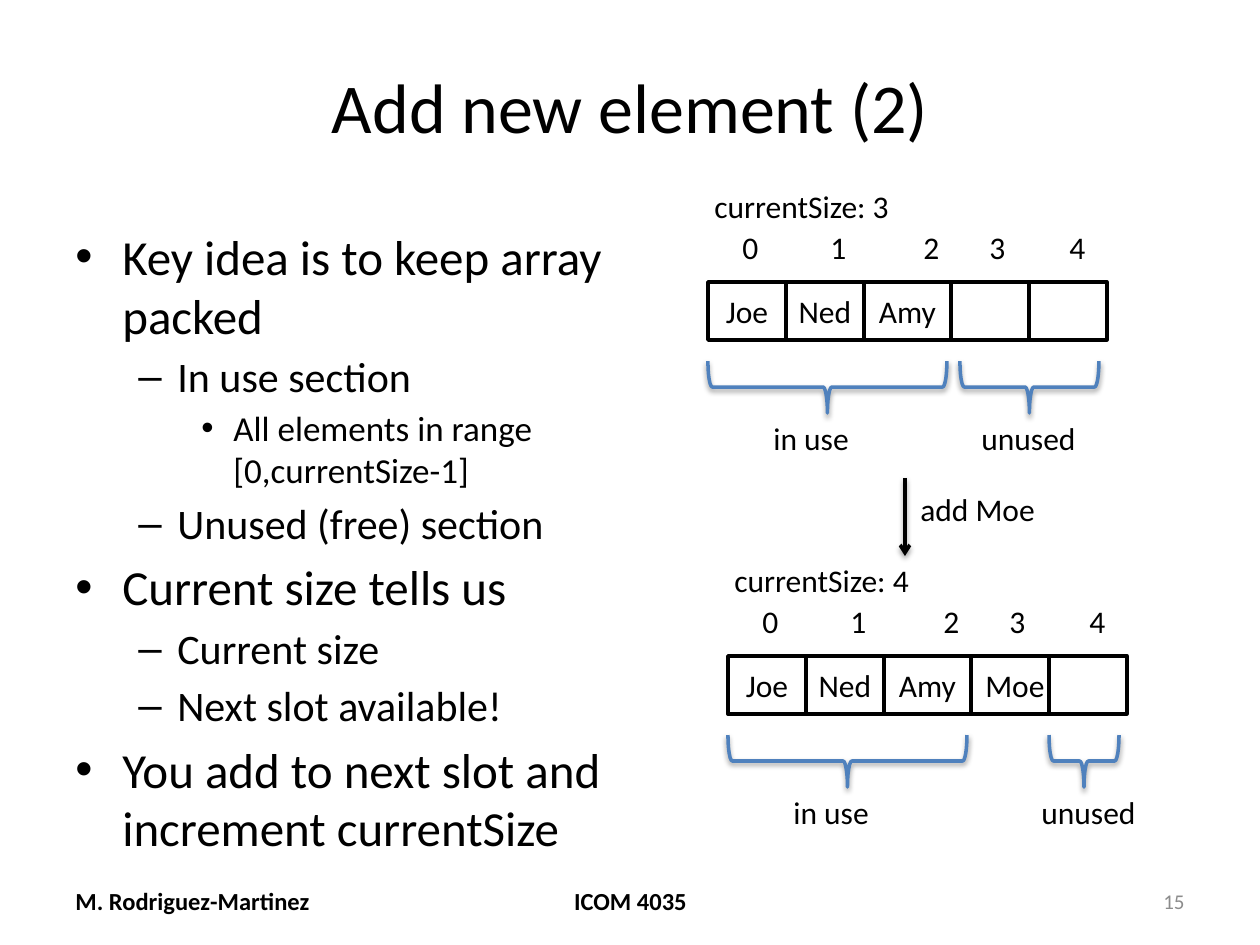
from dataclasses import dataclass

from lxml import etree
from pptx import Presentation
from pptx import util as u
from pptx.dml.color import RGBColor
from pptx.enum import shapes, text
from pptx.oxml import ns

PX = 914400 / 126
FONT = "Calibri"
COLORS = {"ink": "000000", "paper": "FFFFFF", "brace": "4F81BD", "muted": "8C8C8C"}
ALIGN = text.PP_ALIGN
ANCHOR = text.MSO_ANCHOR
CELL_HEIGHT = 58
BRACE_DEPTH = 52
INDEX_STOPS = [88, 181, 247, 327]


@dataclass
class Bullet:
    level: int
    words: str


@dataclass
class Level:
    size: int
    margin: int
    hang: int
    mark: str


@dataclass
class Cell:
    offset: int
    width: int
    name: str = ""


@dataclass
class Section:
    offset: int
    width: int
    label: str
    label_offset: int
    label_width: int


@dataclass
class ArrayState:
    left: int
    top: int
    caption: str
    cells: list[Cell]
    sections: list[Section]


LEVELS = [Level(28, 47, 47, "•"), Level(24, 102, 39, "–"), Level(20, 158, 32, "•")]

BULLETS = [
    Bullet(0, "Key idea is to keep array packed"),
    Bullet(1, "In use section"),
    Bullet(2, "All elements in range [0,currentSize-1]"),
    Bullet(1, "Unused (free) section"),
    Bullet(0, "Current size tells us"),
    Bullet(1, "Current size"),
    Bullet(1, "Next slot available!"),
    Bullet(0, "You add to next slot and increment currentSize"),
]

FIRST_CELLS = [Cell(0, 78, "Joe"), Cell(78, 78, "Ned"), Cell(156, 87, "Amy")]
LAST_CELL = Cell(321, 78)
IN_USE = Section(0, 239, "in use", 53, 102)

STATES = [
    ArrayState(708, 282, "currentSize: 3", [*FIRST_CELLS, Cell(243, 78), LAST_CELL],
               [Section(252, 139, "unused", 261, 121), IN_USE]),
    ArrayState(728, 656, "currentSize: 4", [*FIRST_CELLS, Cell(243, 88, "Moe"), LAST_CELL],
               [Section(321, 70, "unused", 301, 121), IN_USE]),
]


def px(length: float) -> u.Emu:
    return u.Emu(round(length * PX))


def color(key: str) -> RGBColor:
    return RGBColor.from_string(COLORS[key])


def add_run(paragraph, words: str, size: int, ink: str = "ink", bold: bool = False) -> None:
    run = paragraph.add_run()
    run.text = words
    run.font.name = FONT
    run.font.size = u.Pt(size)
    run.font.bold = bold
    run.font.color.rgb = color(ink)


def add_text(parent, left: int, top: int, width: int, height: int, words: str, size: int = 18,
             align=ALIGN.LEFT, anchor=ANCHOR.TOP, wrap: bool = True,
             ink: str = "ink", bold: bool = False):
    frame = parent.add_textbox(px(left), px(top), px(width), px(height)).text_frame
    frame.word_wrap = wrap
    frame.vertical_anchor = anchor
    if not wrap:
        frame.auto_size = text.MSO_AUTO_SIZE.SHAPE_TO_FIT_TEXT
    paragraph = frame.paragraphs[0]
    paragraph.alignment = align
    add_run(paragraph, words, size, ink, bold)
    return paragraph


def add_label(parent, left: int, top: int, width: int, words: str) -> None:
    add_text(parent, left, top, width, 50, words, wrap=False)


def add_effects(shape):
    return etree.SubElement(shape.element.spPr, ns.qn("a:effectLst"))


def add_shadow(shape) -> None:
    shadow = etree.SubElement(add_effects(shape), ns.qn("a:outerShdw"), blurRad="40000",
                              dist="20000", dir="5400000", rotWithShape="0")
    shade = etree.SubElement(shadow, ns.qn("a:srgbClr"), val=COLORS["ink"])
    etree.SubElement(shade, ns.qn("a:alpha"), val="38000")


def set_line(shape, key: str) -> None:
    shape.line.color.rgb = color(key)
    shape.line.width = u.Pt(2)


def add_cell(parent, state: ArrayState, cell: Cell) -> None:
    box = parent.add_shape(shapes.MSO_SHAPE.RECTANGLE, px(state.left + cell.offset),
                           px(state.top), px(cell.width), px(CELL_HEIGHT))
    box.shadow.inherit = False
    box.fill.solid()
    box.fill.fore_color.rgb = color("paper")
    set_line(box, "ink")
    if cell.name:
        box.text_frame.vertical_anchor = ANCHOR.MIDDLE
        paragraph = box.text_frame.paragraphs[0]
        paragraph.alignment = ALIGN.CENTER
        add_run(paragraph, cell.name, 18)


def add_indexes(parent, state: ArrayState) -> None:
    indexes = add_text(parent, state.left + 22, state.top - 60, 372, 50,
                       "\t".join(str(index) for index in range(len(state.cells))))
    stops = etree.SubElement(indexes._p.get_or_add_pPr(), ns.qn("a:tabLst"))
    for stop in INDEX_STOPS:
        etree.SubElement(stops, ns.qn("a:tab"), pos=str(px(stop)), algn="l")


def add_section(parent, state: ArrayState, section: Section) -> None:
    center_x = state.left + section.offset + section.width / 2
    center_y = state.top + 105
    brace = parent.add_shape(shapes.MSO_SHAPE.LEFT_BRACE, px(center_x - BRACE_DEPTH / 2),
                             px(center_y - section.width / 2), px(BRACE_DEPTH), px(section.width))
    brace.rotation = 270
    brace.fill.background()
    set_line(brace, "brace")
    add_shadow(brace)
    add_label(parent, state.left + section.label_offset, state.top + 131,
              section.label_width, section.label)


def add_array(parent, state: ArrayState) -> None:
    array = parent.add_group_shape().shapes
    for cell in state.cells:
        add_cell(array, state, cell)
    add_indexes(array, state)
    for section in state.sections:
        add_section(parent, state, section)
    add_label(parent, state.left - 6, state.top - 101, 203, state.caption)


def add_bullets(parent) -> None:
    frame = parent.add_textbox(px(63), px(220), px(557), px(624)).text_frame
    frame.word_wrap = True
    for number, bullet in enumerate(BULLETS):
        level = LEVELS[bullet.level]
        paragraph = frame.add_paragraph() if number else frame.paragraphs[0]
        paragraph.level = bullet.level
        paragraph.space_before = u.Pt(round(level.size / 6))
        properties = paragraph._p.get_or_add_pPr()
        properties.set("marL", str(px(level.margin)))
        properties.set("indent", str(px(-level.hang)))
        etree.SubElement(properties, ns.qn("a:buFont"), typeface="Arial")
        etree.SubElement(properties, ns.qn("a:buChar"), char=level.mark)
        add_run(paragraph, bullet.words, level.size)


def add_step_arrow(parent) -> None:
    arrow = parent.add_connector(shapes.MSO_CONNECTOR.STRAIGHT, px(905), px(478), px(905), px(556))
    set_line(arrow, "ink")
    etree.SubElement(arrow.line._get_or_add_ln(), ns.qn("a:tailEnd"), type="arrow")
    add_shadow(arrow)
    add_label(parent, 908, 484, 141, "add Moe")


def main() -> None:
    deck = Presentation()
    deck.slide_width, deck.slide_height = px(1260), px(945)
    parts = deck.slides.add_slide(deck.slide_layouts[6]).shapes
    add_text(parts, 63, 38, 1134, 135, "Add new element (2)", 40, ALIGN.CENTER, ANCHOR.MIDDLE)
    add_bullets(parts)
    add_text(parts, 63, 876, 294, 50, "M. Rodriguez-Martinez", 14, anchor=ANCHOR.MIDDLE, bold=True)
    add_text(parts, 431, 876, 399, 50, "ICOM 4035", 14, ALIGN.CENTER, ANCHOR.MIDDLE, bold=True)
    add_text(parts, 903, 876, 294, 50, "15", 12, ALIGN.RIGHT, ANCHOR.MIDDLE, ink="muted")
    for state in STATES:
        add_array(parts, state)
    add_step_arrow(parts)
    deck.save("out.pptx")


if __name__ == "__main__":
    main()
